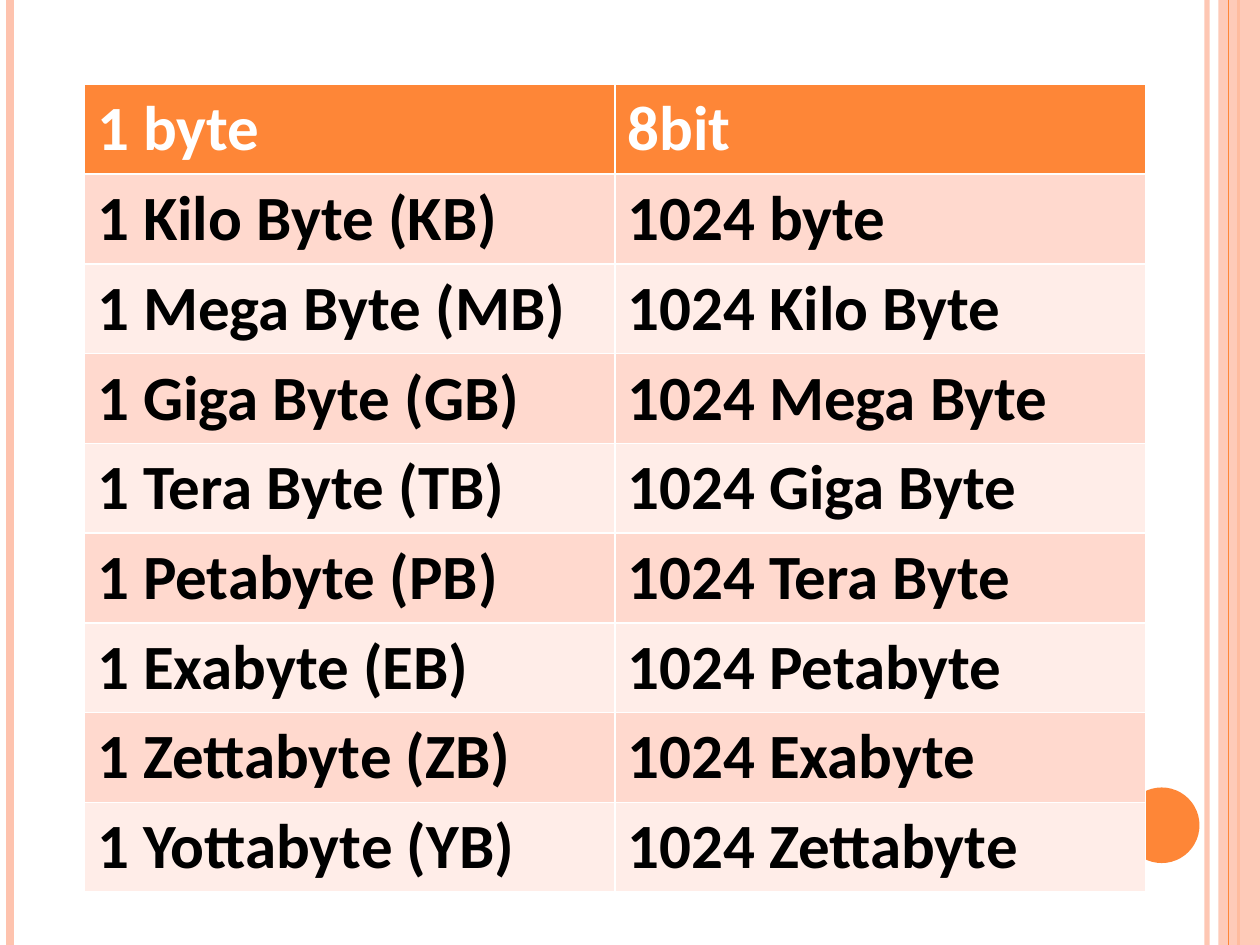
"""Build a slide with a table of data storage units."""
import pptx
import pptx.dml.color
import pptx.enum.shapes
import pptx.oxml.ns
import pptx.util
from lxml import etree

Inches = pptx.util.Inches
qn = pptx.oxml.ns.qn

COLORS = {
    "orange": "FE8637", "peach": "FEC3AE", "band_dark": "FFD9CE",
    "band_light": "FFEDE8", "white": "FFFFFF", "black": "000000",
}
UNITS = [
    ("1 byte", "8bit"),
    ("1 Kilo Byte (KB)", "1024 byte"),
    ("1 Mega Byte (MB)", "1024 Kilo Byte"),
    ("1 Giga Byte (GB)", "1024 Mega Byte"),
    ("1 Tera Byte (TB)", "1024 Giga Byte"),
    ("1 Petabyte (PB)", "1024 Tera Byte"),
    ("1 Exabyte (EB)", "1024 Petabyte"),
    ("1 Zettabyte (ZB)", "1024 Exabyte"),
    ("1 Yottabyte (YB)", "1024 Zettabyte"),
]
STRIPES_BEHIND = [(9.58, "peach", 3, 93), (0.08, "peach", 4.5, 100), (9.83, "orange", 1.5, 100)]
STRIPE_FRONT = (9.75, "orange", 0.75, 100)
SLIDE_WIDTH, SLIDE_HEIGHT = 10, 7.5
TABLE_LEFT, TABLE_TOP, COLUMN_WIDTH, ROW_HEIGHT = 0.67, 0.67, 4.21, 0.64


def paint(fill, color, opacity=100):
    fill.solid()
    fill.fore_color.rgb = pptx.dml.color.RGBColor.from_string(COLORS[color])
    if opacity < 100:
        rgb = fill._xPr.find(".//" + qn("a:srgbClr"))
        etree.SubElement(rgb, qn("a:alpha")).set("val", str(opacity * 1000))


def add_stripe(slide, x, color, weight, opacity):
    stripe = slide.shapes.add_connector(
        pptx.enum.shapes.MSO_CONNECTOR.STRAIGHT,
        Inches(x), 0, Inches(x), Inches(SLIDE_HEIGHT))
    stripe.line.width = pptx.util.Pt(weight)
    paint(stripe.line.fill, color, opacity)
    etree.SubElement(stripe._element.spPr, qn("a:effectLst"))


def add_decoration(slide, kind, box, color, opacity=100):
    decoration = slide.shapes.add_shape(kind, *map(Inches, box))
    decoration.shadow.inherit = False
    decoration.line.fill.background()
    paint(decoration.fill, color, opacity)


def add_units(slide):
    columns = len(UNITS[0])
    units = slide.shapes.add_table(
        len(UNITS), columns, Inches(TABLE_LEFT), Inches(TABLE_TOP),
        Inches(columns * COLUMN_WIDTH), Inches(len(UNITS) * ROW_HEIGHT)).table
    for row, values in enumerate(UNITS):
        band = "orange" if row == 0 else "band_dark" if row % 2 else "band_light"
        for column, value in enumerate(values):
            cell = units.cell(row, column)
            cell.text = value
            paint(cell.fill, band)
            font = cell.text_frame.paragraphs[0].font
            font.name, font.size, font.bold = "Calibri", pptx.util.Pt(36), True
            paint(font.fill, "black" if row else "white")


def main():
    presentation = pptx.Presentation()
    presentation.slide_width = Inches(SLIDE_WIDTH)
    presentation.slide_height = Inches(SLIDE_HEIGHT)
    slide = presentation.slides.add_slide(presentation.slide_layouts[6])
    paint(slide.background.fill, "white")
    shapes = pptx.enum.shapes.MSO_SHAPE
    for stripe in STRIPES_BEHIND:
        add_stripe(slide, *stripe)
    add_decoration(slide, shapes.RECTANGLE, (9.67, 0, 0.33, SLIDE_HEIGHT), "peach", 87)
    add_stripe(slide, *STRIPE_FRONT)
    add_decoration(slide, shapes.OVAL, (8.92, 6.25, 0.6, 0.6), "orange")
    add_units(slide)
    presentation.save("out.pptx")


if __name__ == "__main__":
    main()
